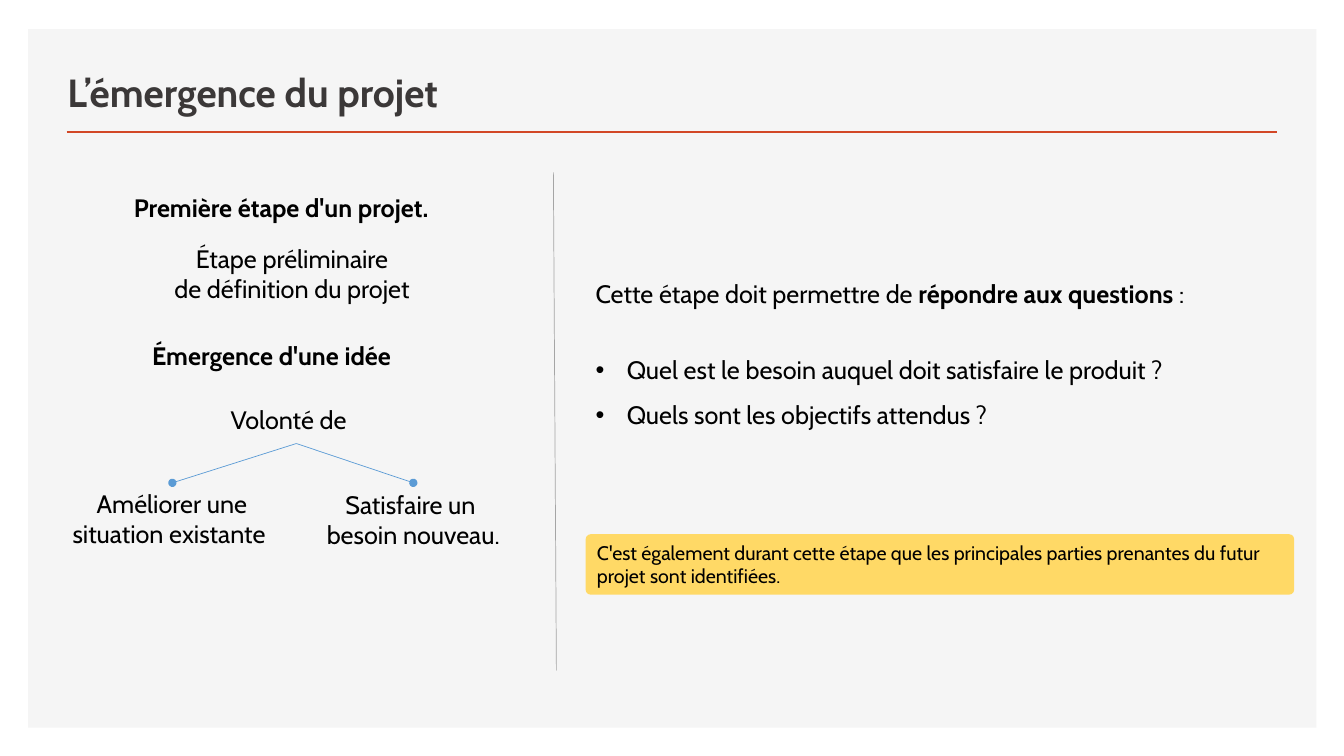
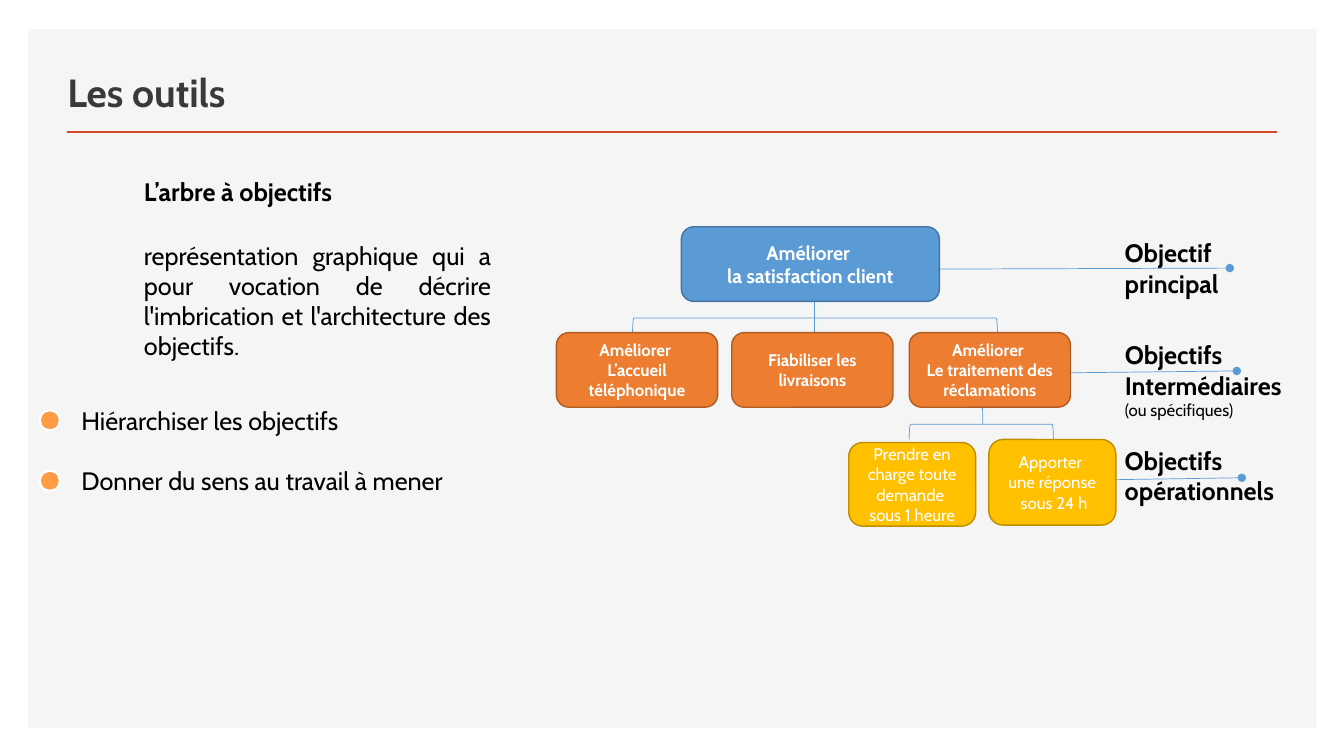
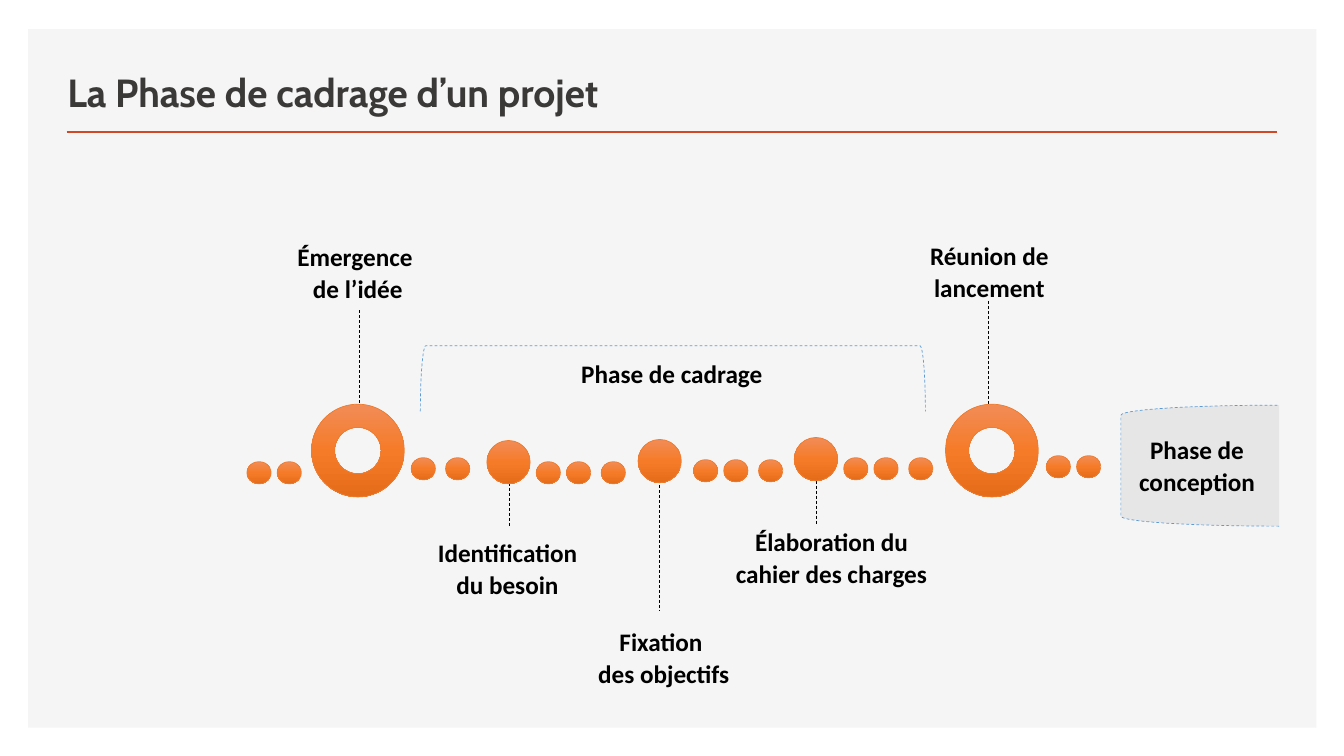
from copy import deepcopy

from lxml import etree
from pptx import Presentation
from pptx.dml.color import RGBColor
from pptx.enum.dml import MSO_LINE
from pptx.enum.shapes import MSO_CONNECTOR, MSO_SHAPE
from pptx.enum.text import MSO_ANCHOR, PP_ALIGN
from pptx.oxml.ns import qn
from pptx.util import Inches, Pt

RECT, ROUND = MSO_SHAPE.RECTANGLE, MSO_SHAPE.ROUNDED_RECTANGLE
OVAL, RING, HOOK = MSO_SHAPE.OVAL, MSO_SHAPE.DONUT, MSO_SHAPE.LEFT_BRACKET
LEFT, MID, FULL = PP_ALIGN.LEFT, PP_ALIGN.CENTER, PP_ALIGN.JUSTIFY
TOP, HALF, LOW = MSO_ANCHOR.TOP, MSO_ANCHOR.MIDDLE, MSO_ANCHOR.BOTTOM
STRAIGHT, DASH = MSO_CONNECTOR.STRAIGHT, MSO_LINE.DASH

# Grid: every cell is a tenth of an inch
CELL = 0.1
COLS, ROWS = 133.33, 75

# Colours
BLACK, WHITE, PANEL, INK, RED = "000000", "FFFFFF", "F5F5F5", "3B3838", "D24726"
BLUE, NAVY, GREY, SILVER = "5B9BD5", "43739E", "A5A5A5", "E7E6E6"
ORANGE, RUST, GOLD, OCHRE = "ED7D31", "AF5C24", "FFC000", "BD8E00"
SAND, DOT = "FFD966", "FF9B45"
GLOW = ("F18C57", "F67B28", "E56C19")

# Text styles
BODY = {"name": "Cabin", "size": 18, "bold": False, "color": BLACK}
STRONG = {**BODY, "bold": True}
HEAD = {**STRONG, "size": 28, "color": INK}
STEP = {**STRONG, "name": "Calibri"}
CARD = {**STRONG, "size": 12, "color": WHITE}


def cell(n):
    return Inches(n * CELL)


def rgb(code):
    return RGBColor.from_string(code)


def put(item, values):
    for key, value in values.items():
        setattr(item, key, value)


class Deck:
    def __init__(self):
        self.file = Presentation()
        put(self.file, {"slide_width": cell(COLS), "slide_height": cell(ROWS)})
        self.slide = None

    def page(self, title):
        """Start a slide with the shared panel, rule and title."""
        self.slide = self.file.slides.add_slide(self.file.slide_layouts[6])
        self.shape(RECT, 2.8, 2.9, 127.8, 69.3, PANEL)
        self.line(6.6, 13.1, 126.7, 13.1, RED, 2)
        self.text(5.7, 4.9, 95, 7, [title], HEAD, anchor=LOW)

    def fill(self, frame, paras, style, align=LEFT, anchor=TOP, **form):
        """Fill a frame; asterisks switch bold, a pair adds its own style."""
        put(frame, {"word_wrap": True, "vertical_anchor": anchor})
        for i, item in enumerate(paras):
            words, extra = item if isinstance(item, tuple) else (item, {})
            para = frame.paragraphs[0] if i == 0 else frame.add_paragraph()
            put(para, {"alignment": align, **form})
            look = {**style, **extra}
            for j, part in enumerate(words.split("*")):
                run = para.add_run()
                run.text = part
                put(run.font, {"name": look["name"], "size": Pt(look["size"]),
                               "bold": look["bold"] != bool(j % 2)})
                run.font.color.rgb = rgb(look["color"])

    def text(self, x, y, w, h, paras, style=BODY, **form):
        box = self.slide.shapes.add_textbox(cell(x), cell(y), cell(w), cell(h))
        self.fill(box.text_frame, paras, style, **form)
        return box.text_frame

    def step(self, x, y, w, h, *paras):
        self.text(x, y, w, h, paras, STEP, align=MID, line_spacing=1.07)

    def bullet(self, para):
        inset = Inches(0.31)
        props = para._p.get_or_add_pPr()
        put(para, {"line_spacing": 1.5})
        props.set("marL", str(inset))
        props.set("indent", str(-inset))
        etree.SubElement(props, qn("a:buFont"), typeface="Arial")
        etree.SubElement(props, qn("a:buChar"), char="•")

    def pen(self, line, color, width, dash):
        line.color.rgb = rgb(color)
        put(line, {"width": Pt(width), "dash_style": dash})

    def shape(self, kind, x, y, w, h, fill=None, edge=None, width=1,
              dash=None, turn=0):
        item = self.slide.shapes.add_shape(kind, cell(x), cell(y), cell(w), cell(h))
        item.shadow.inherit = False
        item.rotation = turn
        if fill:
            item.fill.solid()
            item.fill.fore_color.rgb = rgb(fill)
        else:
            item.fill.background()
        if edge:
            self.pen(item.line, edge, width, dash)
        else:
            item.line.fill.background()
        return item

    def hook(self, x, y, w, h, fill=None, dash=None, turn=90):
        self.shape(HOOK, x, y, w, h, fill, BLUE, 0.5, dash, turn)

    def card(self, x, y, w, h, fill, edge, paras, **extra):
        item = self.shape(ROUND, x, y, w, h, fill, edge)
        self.fill(item.text_frame, paras, {**CARD, **extra}, MID, HALF)

    def bead(self, kind, x, y, w, h):
        """Shape with a three-stop gradient from top to bottom."""
        item = self.shape(kind, x, y, w, h, edge=ORANGE, width=0.5)
        item.fill.gradient()
        item.fill.gradient_angle = 270
        stops = next(item.element.spPr.iter(qn("a:gsLst")))
        stops.insert(1, deepcopy(stops[0]))
        for i, stop in enumerate(item.fill.gradient_stops):
            stop.color.rgb = rgb(GLOW[i])
            stop.position = i / 2

    def line(self, x1, y1, x2, y2, color=BLUE, width=0.5, dash=None, dot=False):
        item = self.slide.shapes.add_connector(
            STRAIGHT, cell(x1), cell(y1), cell(x2), cell(y2))
        self.pen(item.line, color, width, dash)
        if dot:
            etree.SubElement(item.line._get_or_add_ln(), qn("a:tailEnd"), type="oval")
        etree.SubElement(item.element.spPr, qn("a:effectLst"))


def origin(deck):
    deck.page("L’émergence du projet")

    # Left side: from first step to the two aims
    deck.text(10.6, 18.6, 34.6, 4, ["Première étape d'un projet."], STRONG, align=MID)
    deck.text(15.4, 23.6, 27.7, 7.1,
              ["Étape préliminaire ", "de définition du projet "], align=MID)
    deck.text(14.1, 33.3, 28.9, 4, ["Émergence d'une idée"], STRONG)
    deck.text(21.9, 39.6, 14.7, 4, ["Volonté de"])
    deck.text(5.7, 47.9, 22.7, 7.1, ["Améliorer une situation existante "], align=MID)
    deck.text(28.5, 48, 25, 7.1, ["Satisfaire un ", "besoin nouveau."], align=MID)
    for x in (17.1, 41):
        deck.line(29.4, 44, x, 47.9, dot=True)
    deck.line(54.9, 17.1, 55.2, 66.5, GREY)

    # Right side: questions and remark
    frame = deck.text(58.1, 27.1, 66.7, 16.2, [
        "Cette étape doit permettre de *répondre aux questions *:",
        "Quel est le besoin auquel doit satisfaire le produit ?",
        "Quels sont les objectifs attendus ?"])
    for para in frame.paragraphs[1:]:
        deck.bullet(para)
    frame.paragraphs[1].space_before = Pt(22)
    note = deck.shape(ROUND, 58.1, 53, 70.3, 6, SAND)
    note.adjustments[0] = 0.085
    deck.fill(note.text_frame, [
        "C'est également durant cette étape que les principales parties "
        "prenantes du futur projet sont identifiées."], {**BODY, "size": 14})


def tools(deck):
    deck.page("Les outils")

    # Links of the tree
    deck.hook(80, 14.3, 1.7, 36.2)
    deck.hook(96.6, 35.7, 1.5, 14.3)
    deck.line(80.8, 29.7, 80.8, 33.2)
    deck.line(97.4, 35.5, 97.5, 42.1)
    for x1, y1, x2, y2 in ((103.5, 47.7, 123.2, 47.4), (104.7, 37, 122.7, 36.8),
                           (92.1, 26.7, 122, 26.6)):
        deck.line(x1, y1, x2, y2, dot=True)

    # Definition and uses
    deck.text(13.3, 17, 23, 4, ["L’arbre à objectifs"], STRONG)
    deck.text(13.3, 23.3, 36.4, 13.1, [
        "représentation graphique qui a pour vocation de décrire "
        "l'imbrication et l'architecture des objectifs."], align=FULL)
    uses = ("Hiérarchiser les objectifs", "Donner du sens au travail à mener")
    for i, use in enumerate(uses):
        y = 39.7 + 6 * i
        deck.text(7.1, y, 42.6, 4, [use])
        deck.shape(OVAL, 3.95, y + 1, 2, 2, DOT, WHITE, 1.5)

    # Names of the levels
    small = {"size": 12, "bold": False}
    levels = ((23.1, 17.6, ["Objectif principal"]),
              (33.2, 22.8, ["Objectifs Intermédiaires", ("(ou spécifiques)", small)]),
              (43.7, 22, ["Objectifs opérationnels"]))
    for y, w, names in levels:
        deck.text(110.6, y, w, 7.1, names, STRONG)

    # Cards of the tree
    deck.card(67.6, 22.5, 25.6, 7.4, BLUE, NAVY,
              ["Améliorer ", "la satisfaction client"], size=14)
    aims = ((55.2, ["Améliorer ", "L’accueil téléphonique"]),
            (72.6, ["Fiabiliser les livraisons"]),
            (90.2, ["Améliorer ", "Le traitement des réclamations"]))
    for x, words in aims:
        deck.card(x, 33, 16, 7.4, ORANGE, RUST, words)
    tasks = ((84.2, 43.9, 8.3, ["Prendre en charge toute demande ", "sous 1 heure"]),
             (98.1, 43.6, 8.5, ["Apporter ", "une réponse", " sous 24 h"]))
    for x, y, h, words in tasks:
        deck.card(x, y, 12.6, h, GOLD, OCHRE, words, bold=False)


def framing(deck):
    deck.page("La Phase de cadrage d’un projet")

    # Dashed guides and brackets
    guides = ((65.4, 47.1, 60.5), (81, 46.2, 52.1), (50.5, 46.4, 52.3),
              (35.7, 30.8, 41.1), (98.1, 29.9, 40.1))
    for x, y1, y2 in guides:
        deck.line(x, y1, x, y2, BLACK, dash=DASH)
    deck.hook(111.2, 40.2, 15.7, 12, SILVER, DASH, 0)
    deck.hook(63.5, 12.5, 6.5, 50.1, dash=DASH)

    # Beads: runs of small ones, milestones and end rings
    trio = (0, 3, 6.45)
    runs = ((24.5, 45.8, (0, 3)), (40.8, 45.4, (0, 3.4)), (53.2, 45.8, trio),
            (68.8, 45.6, trio), (83.7, 45.4, trio), (103.8, 45.2, (0, 3)))
    for x, y, steps in runs:
        for step in steps:
            deck.bead(OVAL, x + step, y, 2.4, 2.2)
    for x, y in ((48.3, 43.7), (63.3, 43.6), (78.8, 43.4)):
        deck.bead(OVAL, x, y, 4.3, 4.3)
    for x in (30.9, 93.8):
        deck.bead(RING, x, 40.1, 9.2, 9.2)

    # Labels
    deck.step(44.2, 34.8, 44.9, 3, "Phase de cadrage")
    deck.step(88.2, 23.1, 19.9, 3.3, "Réunion de lancement")
    deck.step(25, 23.2, 21, 7.6, "Émergence ", "de l’idée")
    deck.step(108.8, 42.4, 19.9, 3.3, "Phase de conception")
    deck.step(71.8, 51.5, 21.4, 3, "Élaboration du cahier des charges")
    deck.step(41.5, 52.6, 17.7, 3, "Identification du besoin")
    deck.step(52.9, 61.4, 25.9, 3, "Fixation ", "des objectifs")


def main():
    deck = Deck()
    for build in (origin, tools, framing):
        build(deck)
    deck.file.save("out.pptx")


if __name__ == "__main__":
    main()
